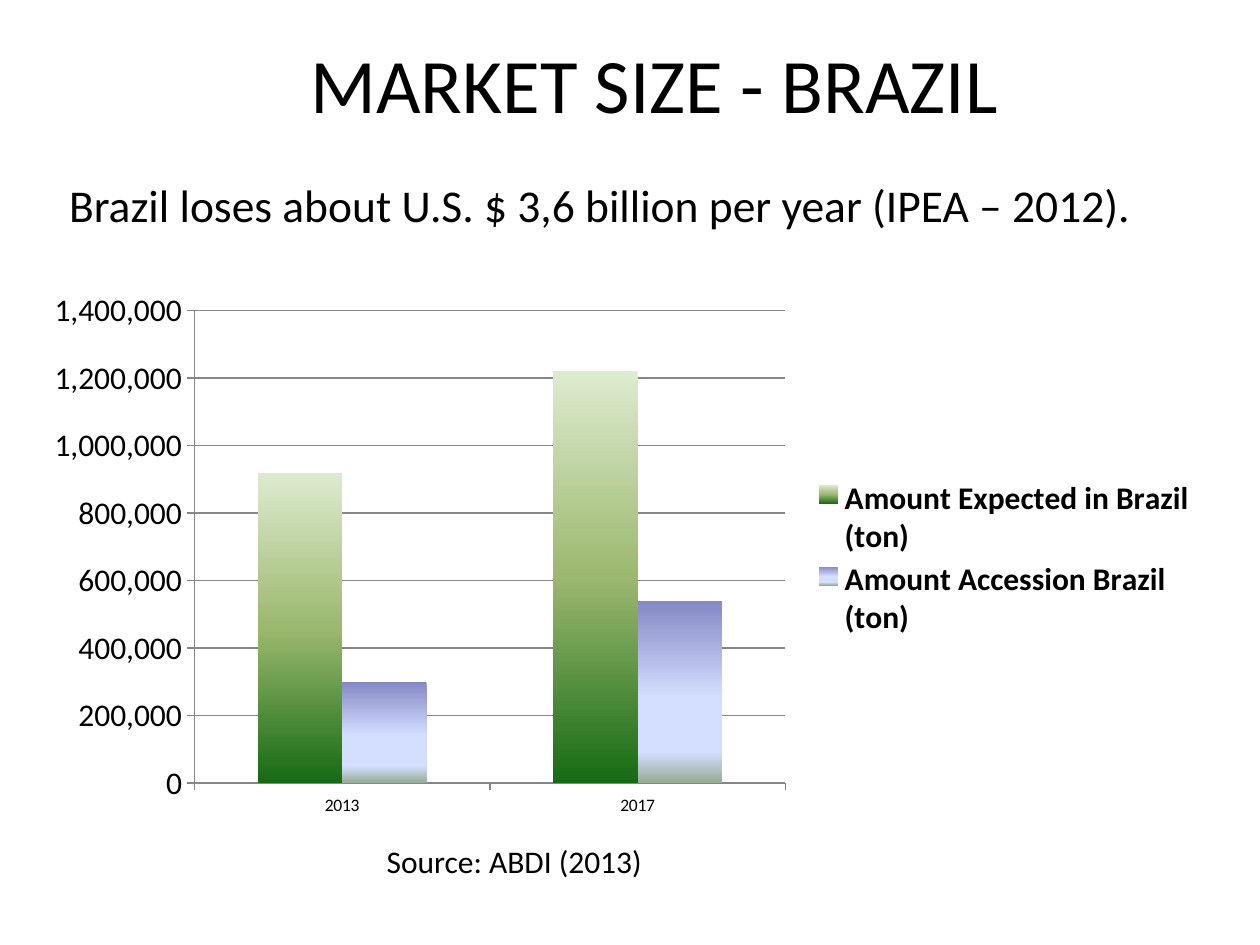
from pptx import Presentation
from pptx.chart.data import CategoryChartData
from pptx.dml.color import RGBColor
from pptx.enum.chart import XL_CHART_TYPE as ChartType, XL_LEGEND_POSITION as LegendPosition
from pptx.enum.chart import XL_TICK_MARK as TickMark
from pptx.enum.text import MSO_ANCHOR as Anchor, PP_ALIGN as Align
from pptx.oxml import parse_xml
from pptx.oxml.ns import nsdecls, qn
from pptx.util import Inches, Pt

FONT = "Calibri"
BLACK = "000000"
AXIS_GREY = "868686"

YEARS = ["2013", "2017"]
# Name, values, gradient stops (percent, colour)
SERIES = [
    ("Amount Expected in Brazil (ton)", [920000, 1220000],
     [(0, "DDEBCF"), (50, "9CB86E"), (100, "156B13")]),
    ("Amount Accession Brazil (ton)", [300000, 540000],
     [(0, "8488C4"), (53, "D4DEFF"), (83, "D4DEFF"), (100, "96AB94")]),
]


def color(hex_value):
    return RGBColor.from_string(hex_value)


def set_font(font, size, bold=False):
    for name, value in {"name": FONT, "size": Pt(size), "bold": bold}.items():
        setattr(font, name, value)
    font.color.rgb = color(BLACK)


def add_text(page, text, place, size, align=Align.LEFT, anchor=Anchor.TOP):
    box = page.shapes.add_textbox(*map(Inches, place))
    frame = box.text_frame
    frame.word_wrap = True
    frame.vertical_anchor = anchor
    para = frame.paragraphs[0]
    para.alignment = align
    span = para.add_run()
    span.text = text
    set_font(span.font, size)


def set_gradient(series, stops):
    """Fill the bars with a vertical gradient of any number of stops."""
    series.format.fill.gradient()
    gradient = series.format.fill._xPr.find(qn("a:gradFill"))
    for child in list(gradient):
        gradient.remove(child)
    marks = "".join(
        f'<a:gs pos="{percent * 1000}"><a:srgbClr val="{value}"/></a:gs>'
        for percent, value in stops)
    gradient.append(parse_xml(f'<a:gsLst {nsdecls("a")}>{marks}</a:gsLst>'))
    gradient.append(parse_xml(f'<a:lin {nsdecls("a")} ang="5400000" scaled="0"/>'))


def set_layout(part, index, inner, **fractions):
    """Place a chart part by fractions of the chart's size."""
    old = part.find(qn("c:layout"))
    if old is not None:
        part.remove(old)
    target = '<c:layoutTarget val="inner"/>' if inner else ""
    modes = '<c:xMode val="edge"/><c:yMode val="edge"/>'
    sizes = "".join(f'<c:{key} val="{value}"/>' for key, value in fractions.items())
    part.insert(index, parse_xml(
        f'<c:layout {nsdecls("c")}><c:manualLayout>{target}{modes}{sizes}'
        '</c:manualLayout></c:layout>'))


def style_axis(axis, size):
    axis.major_tick_mark = TickMark.OUTSIDE
    axis.minor_tick_mark = TickMark.NONE
    axis.format.line.color.rgb = color(AXIS_GREY)
    set_font(axis.tick_labels.font, size)


def add_market_chart(page, place):
    data = CategoryChartData(number_format="#,##0")
    data.categories = YEARS
    for name, values, _ in SERIES:
        data.add_series(name, values)
    chart = page.shapes.add_chart(
        ChartType.COLUMN_CLUSTERED, *map(Inches, place), data).chart
    chart.has_title = False
    set_font(chart.font, 10)

    # Bars
    plot = chart.plots[0]
    for name, value in {"gap_width": 150, "overlap": 0, "vary_by_categories": False}.items():
        setattr(plot, name, value)
    for series, (_, _, stops) in zip(plot.series, SERIES):
        set_gradient(series, stops)

    # Axes
    style_axis(chart.category_axis, 10)
    amounts = chart.value_axis
    style_axis(amounts, 18)
    for name, value in {"minimum_scale": 0, "maximum_scale": 1400000,
                        "major_unit": 200000, "has_major_gridlines": True}.items():
        setattr(amounts, name, value)
    amounts.major_gridlines.format.line.color.rgb = color(AXIS_GREY)
    amounts.tick_labels.number_format = "#,##0"
    amounts.tick_labels.number_format_is_linked = False

    # Legend
    chart.has_legend = True
    legend = chart.legend
    legend.position = LegendPosition.RIGHT
    legend.include_in_layout = False
    set_font(legend.font, 18, bold=True)

    set_layout(plot._element.getparent(), 0, True, x=0.14, y=0.05, w=0.5, h=0.87)
    set_layout(legend._element, 1, False, x=0.66, y=0.35, w=0.33, h=0.31)


def main():
    deck = Presentation()
    deck.slide_width, deck.slide_height = Inches(10), Inches(7.5)
    page = deck.slides.add_slide(deck.slide_layouts[6])

    # Heading and statement
    add_text(page, "MARKET SIZE - BRAZIL", (1.06, 0.03, 8.27, 1.25), 44,
             Align.CENTER, Anchor.MIDDLE)
    add_text(page, "Brazil loses about U.S. $ 3,6 billion per year (IPEA – 2012).",
             (0.45, 1.36, 9.16, 5.43), 26, Align.JUSTIFY)

    # Chart and its source
    add_market_chart(page, (0.23, 2.25, 9.38, 4.31))
    add_text(page, "Source: ABDI (2013)", (2.97, 6.63, 3.2, 0.4), 18)

    deck.save("out.pptx")


if __name__ == "__main__":
    main()
